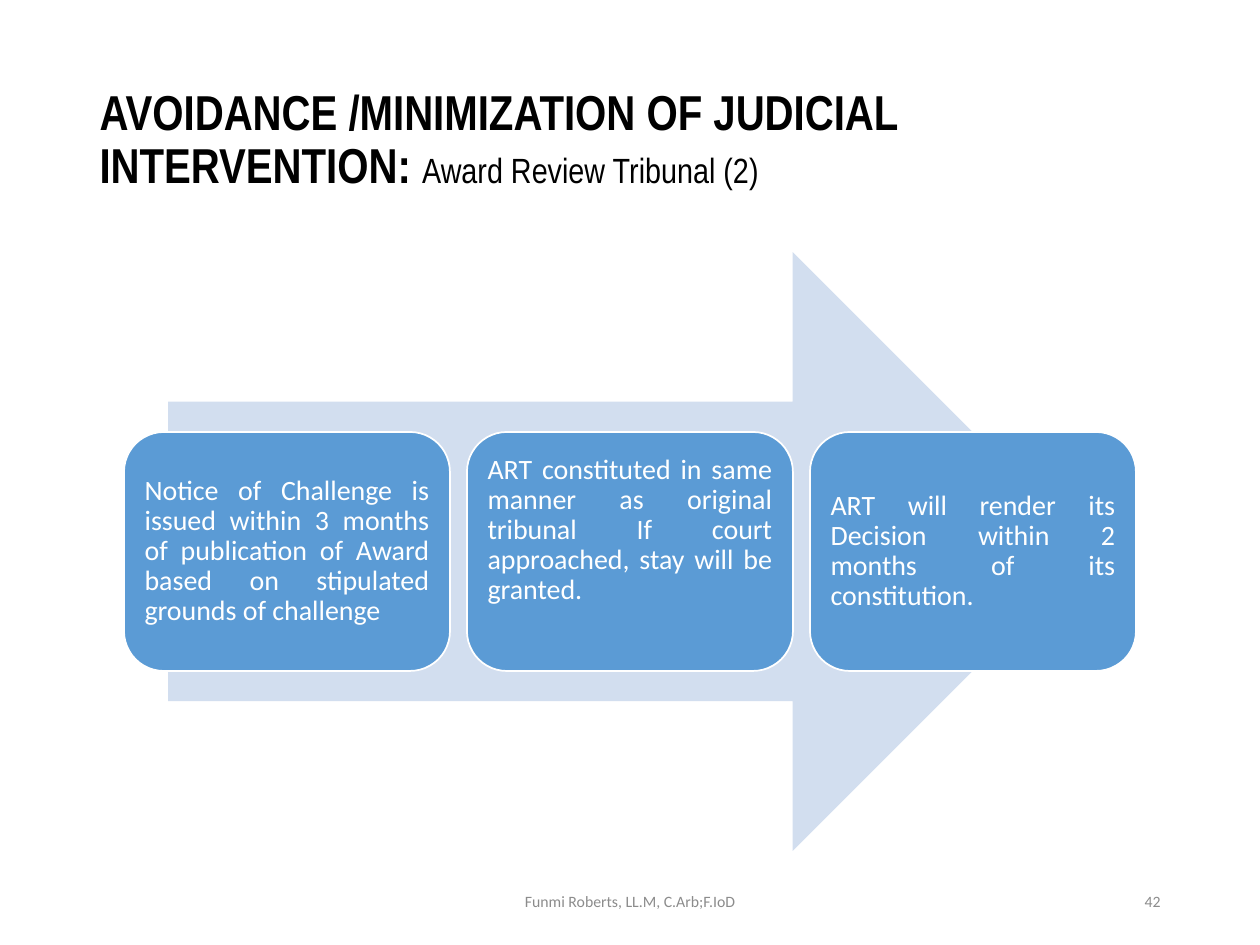
from pptx import Presentation
from pptx.dml.color import RGBColor
from pptx.enum.shapes import MSO_SHAPE as Shape
from pptx.enum.text import MSO_ANCHOR as Anchor, MSO_AUTO_SIZE as AutoSize, PP_ALIGN as Align
from pptx.util import Emu, Pt

PX = 914400 / 126
COLORS = {"ink": "000000", "arrow": "D2DEEF", "step": "5B9BD5", "white": "FFFFFF", "footer": "8C8C8C"}
STEPS = [
    ("Notice of Challenge is issued within 3 months of publication of Award "
     "based on stipulated grounds of challenge", 0),
    ("ART constituted in same manner as original tribunal If court approached, "
     "stay will be granted.", 42),
    ("ART will render its Decision within 2 months of its constitution.", 0),
]


def px(length):
    return Emu(round(length * PX))


def color(name):
    return RGBColor.from_string(COLORS[name])


def style(run, size, name, face="Calibri", bold=False):
    run.font.size = Pt(size)
    run.font.name = face
    run.font.bold = bold
    run.font.color.rgb = color(name)


def place_title(slide, left, top, width, height):
    title = slide.shapes.title
    title.left, title.top, title.width, title.height = map(px, (left, top, width, height))
    frame = title.text_frame
    frame.auto_size = AutoSize.NONE
    frame.vertical_anchor = Anchor.MIDDLE
    heading = frame.paragraphs[0]
    heading.alignment = Align.LEFT
    heading.line_spacing = 0.9
    for words, size, bold in (("AVOIDANCE /MINIMIZATION OF JUDICIAL INTERVENTION: ", 28, True),
                              ("Award Review Tribunal (2)", 20, False)):
        run = heading.add_run()
        run.text = words
        style(run, size, "ink", "Arial Narrow", bold)


def add_filled(slide, preset, box, fill):
    shape = slide.shapes.add_shape(preset, *map(px, box))
    shape.shadow.inherit = False
    shape.fill.solid()
    shape.fill.fore_color.rgb = color(fill)
    shape.line.fill.background()
    return shape


def place_process(slide, left, top, width, height):
    arrow_inset, step_width, step_height = 44, 326, 239
    add_filled(slide, Shape.RIGHT_ARROW,
               (left + arrow_inset, top, width - 2 * arrow_inset, height), "arrow")
    pitch = (width - step_width) / (len(STEPS) - 1)
    step_top = top + (height - step_height) / 2
    for index, (words, raise_by) in enumerate(STEPS):
        step = add_filled(slide, Shape.ROUNDED_RECTANGLE,
                          (left + index * pitch, step_top, step_width, step_height), "step")
        step.line.color.rgb = color("white")
        step.line.width = Pt(1)
        frame = step.text_frame
        frame.text = words
        frame.word_wrap = True
        frame.vertical_anchor = Anchor.MIDDLE
        frame.margin_left = frame.margin_right = frame.margin_top = px(9)
        frame.margin_bottom = px(9 + raise_by)
        paragraph = frame.paragraphs[0]
        paragraph.alignment = Align.JUSTIFY
        paragraph.line_spacing = 0.9
        style(paragraph.runs[0], 16, "white")


def place_footer(slide, left, top, width, height):
    author_width, number_width = 426, 284
    for words, offset, box_width, align in (
            ("Funmi Roberts, LL.M, C.Arb;F.IoD", (width - author_width) / 2, author_width, Align.CENTER),
            ("42", width - number_width, number_width, Align.RIGHT)):
        box = slide.shapes.add_textbox(px(left + offset), px(top), px(box_width), px(height))
        frame = box.text_frame
        frame.text = words
        frame.word_wrap = True
        frame.vertical_anchor = Anchor.MIDDLE
        frame.paragraphs[0].alignment = align
        style(frame.paragraphs[0].runs[0], 9, "footer")


def main():
    deck = Presentation()
    deck.slide_width, deck.slide_height = px(1260), px(945)
    slide = deck.slides.add_slide(deck.slide_layouts[5])
    place_title(slide, 87, 50, 1086, 183)
    place_process(slide, 124, 252, 1012, 599)
    place_footer(slide, 87, 876, 1086, 50)
    deck.save("out.pptx")


if __name__ == "__main__":
    main()
